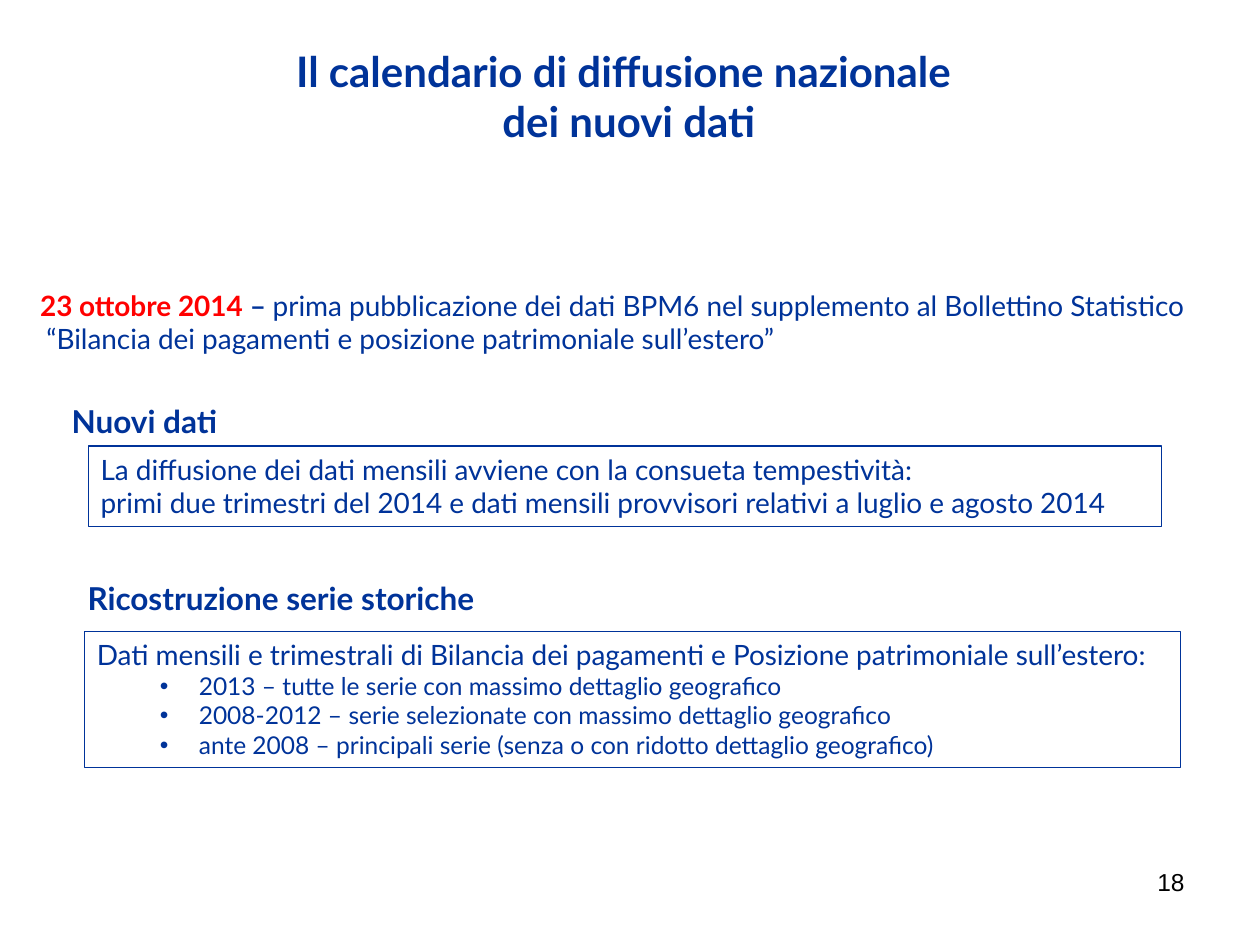
from dataclasses import dataclass

from lxml import etree
from pptx import Presentation
from pptx.dml.color import RGBColor
from pptx.enum.shapes import MSO_SHAPE
from pptx.enum.text import MSO_ANCHOR, PP_ALIGN
from pptx.oxml.ns import qn
from pptx.util import Inches, Pt

BLUE = RGBColor(0x00, 0x33, 0x99)
RED = RGBColor(0xFF, 0x00, 0x00)
BLACK = RGBColor(0x00, 0x00, 0x00)
LEFT, CENTER, RIGHT = PP_ALIGN.LEFT, PP_ALIGN.CENTER, PP_ALIGN.RIGHT
TOP = MSO_ANCHOR.TOP
RECTANGLE = MSO_SHAPE.RECTANGLE


@dataclass
class Run:
    text: str
    size: int = 16
    bold: bool = False
    color: RGBColor = BLUE
    font: str = "Lato"


@dataclass
class Para:
    runs: list[Run]
    align: PP_ALIGN = LEFT
    bullet: bool = False
    indent: float = 0


@dataclass
class Block:
    left: float
    top: float
    width: float
    height: float
    paras: list[Para]
    framed: bool = False


def set_indent(p, left: float, first: float, bullet: bool) -> None:
    pPr = p._p.get_or_add_pPr()
    pPr.set("marL", str(Inches(left)))
    pPr.set("indent", str(Inches(first)))
    if bullet:
        etree.SubElement(pPr, qn("a:buFont")).set("typeface", "Arial")
        etree.SubElement(pPr, qn("a:buChar")).set("char", "•")


def fill_text(tf, paras: list[Para]) -> None:
    tf.word_wrap = True
    tf.vertical_anchor = TOP
    for i, para in enumerate(paras):
        p = tf.paragraphs[0] if i == 0 else tf.add_paragraph()
        p.alignment = para.align
        if para.bullet:
            p.level = 1
            set_indent(p, 0.81, -0.31, True)
        elif para.indent:
            set_indent(p, para.indent, 0, False)
        for run in para.runs:
            r = p.add_run()
            r.text = run.text
            r.font.name = run.font
            r.font.size = Pt(run.size)
            r.font.bold = run.bold
            r.font.color.rgb = run.color


def add_block(s, block: Block) -> None:
    box = [Inches(v) for v in (block.left, block.top, block.width, block.height)]
    if block.framed:
        sp = s.shapes.add_shape(RECTANGLE, *box)
        sp.shadow.inherit = False
        sp.fill.background()
        sp.line.color.rgb = BLUE
        sp.line.width = Pt(0.75)
    else:
        sp = s.shapes.add_textbox(*box)
    fill_text(sp.text_frame, block.paras)


def heading(text: str) -> list[Para]:
    return [Para([Run(text, 18, True)], CENTER)]


TITLE = [
    Para([Run(line, 24, True)], CENTER)
    for line in ("Il calendario di diffusione nazionale ", "dei nuovi dati")
]
SERIES = (
    "2013 – tutte le serie con massimo dettaglio geografico",
    "2008-2012 – serie selezionate con massimo dettaglio geografico",
    "ante 2008 – principali serie (senza o con ridotto dettaglio geografico)",
)
BLOCKS = [
    Block(0.22, 2.24, 9.54, 0.64, [
        Para([
            Run("23 ottobre 2014 ", bold=True, color=RED),
            Run("– ", bold=True),
            Run("prima pubblicazione dei dati BPM6 nel supplemento al "
                "Bollettino Statistico"),
        ]),
        Para([Run("“Bilancia dei pagamenti e posizione patrimoniale "
                  "sull’estero”")], indent=0.05),
    ]),
    Block(0.29, 3.14, 1.71, 0.4, heading("Nuovi dati")),
    Block(0.7, 3.54, 8.52, 0.64, [
        Para([Run("La diffusione dei dati mensili avviene con la consueta "
                  "tempestività:")]),
        Para([Run("primi due trimestri del 2014 e dati mensili provvisori "
                  "relativi a luglio e agosto 2014")]),
    ], framed=True),
    Block(0.28, 4.55, 3.9, 0.4, heading("Ricostruzione serie storiche")),
    Block(0.67, 5.01, 8.7, 1.08, [
        Para([Run("Dati mensili e trimestrali di Bilancia dei pagamenti e "
                  "Posizione patrimoniale sull’estero:")]),
        *(Para([Run(text, 14)], bullet=True) for text in SERIES),
    ], framed=True),
    Block(7.17, 6.83, 2.33, 0.52,
          [Para([Run("18", 14, color=BLACK, font="Arial")], RIGHT)]),
]


def main() -> None:
    prs = Presentation()
    prs.slide_width, prs.slide_height = Inches(10), Inches(7.5)
    s = prs.slides.add_slide(prs.slide_layouts[5])
    title = s.shapes.title
    title.left, title.top = Inches(0.62), Inches(0.31)
    title.width, title.height = Inches(8.74), Inches(0.91)
    fill_text(title.text_frame, TITLE)
    for block in BLOCKS:
        add_block(s, block)
    prs.save("out.pptx")


if __name__ == "__main__":
    main()
